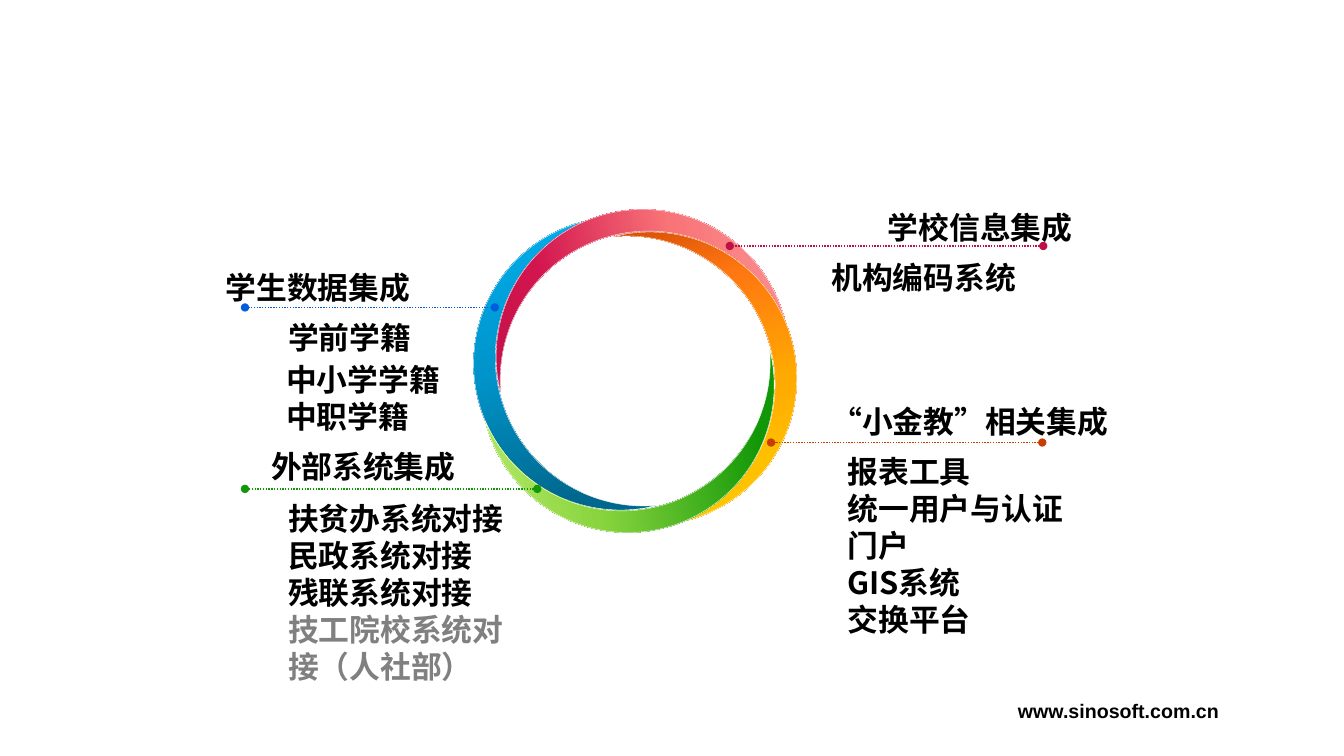
from lxml import etree
from pptx import Presentation
from pptx.dml.color import RGBColor
from pptx.enum.dml import MSO_LINE
from pptx.enum.shapes import MSO_CONNECTOR, MSO_SHAPE
from pptx.enum.text import MSO_AUTO_SIZE
from pptx.oxml.ns import qn
from pptx.util import Pt

STRAIGHT = MSO_CONNECTOR.STRAIGHT
MOON = MSO_SHAPE.MOON
DOTTED = MSO_LINE.ROUND_DOT
FIT_SHAPE = MSO_AUTO_SIZE.SHAPE_TO_FIT_TEXT

CHINESE_FONT = "Noto Sans CJK SC"
BLACK, GRAY, WHITE = "000000", "808080", "FFFFFF"
BLUE, GREEN, RED, ORANGE = "005DDF", "119707", "BE1247", "C73E01"


def color(value):
    return RGBColor.from_string(value)


class IntegrationSlide:
    body = {"size": Pt(22), "bold": True, "name": CHINESE_FONT}
    footer = {"size": Pt(14), "bold": True, "name": "Arial"}
    line_height = 26.6
    padding = 7.2

    def __init__(self, presentation):
        self.slide = presentation.slides.add_slide(presentation.slide_layouts[6])

    def text(self, left, top, width, lines, style=None, wrap=True, rows=None, last_color=BLACK):
        """Write one paragraph per line; rows counts the lines after wrapping."""
        style = style or self.body
        height = self.padding + self.line_height * (rows or len(lines))
        box = self.slide.shapes.add_textbox(Pt(left), Pt(top), Pt(width), Pt(height))
        frame = box.text_frame
        frame.word_wrap = wrap
        frame.auto_size = FIT_SHAPE
        for index, line in enumerate(lines):
            paragraph = frame.paragraphs[0] if index == 0 else frame.add_paragraph()
            run = paragraph.add_run()
            run.text = line
            for name, value in style.items():
                setattr(run.font, name, value)
            run.font.color.rgb = color(last_color if index == len(lines) - 1 else BLACK)
            east_asian = etree.SubElement(run.font._element, qn("a:ea"))
            east_asian.set("typeface", style["name"])

    def crescent(self, center_x, center_y, rotation, stops):
        width, height = 105.1, 209.5
        shape = self.slide.shapes.add_shape(
            MOON, Pt(center_x - width / 2), Pt(center_y - height / 2), Pt(width), Pt(height))
        shape.shadow.inherit = False
        shape.rotation = rotation
        shape.adjustments[0] = 0.152
        shape.line.color.rgb = color(WHITE)
        shape.line.width = Pt(0.25)
        shape.fill.gradient()
        shape.fill.gradient_angle = 90
        stop_list = shape._element.spPr.find(".//" + qn("a:gsLst"))
        for stop in list(stop_list):
            stop_list.remove(stop)
        for percent, value in stops:
            stop = etree.SubElement(stop_list, qn("a:gs"), pos=str(percent * 1000))
            etree.SubElement(stop, qn("a:srgbClr"), val=value)

    def leader(self, start, end, y, line_color):
        """Draw a dotted horizontal line with a dot at each end."""
        connector = self.slide.shapes.add_connector(STRAIGHT, Pt(start), Pt(y), Pt(end), Pt(y))
        line = connector.line
        line.color.rgb = color(line_color)
        line.width = Pt(1)
        line.dash_style = DOTTED
        for tag in ("a:headEnd", "a:tailEnd"):
            etree.SubElement(line._ln, qn(tag), type="oval")
        etree.SubElement(connector._element.spPr, qn("a:effectLst"))


def build_ring(page):
    crescents = [
        [(17, "00688E"), (56, "0094CA"), (100, "00B0F0")],
        [(0, "BE1247"), (27, "D2144F"), (66, "F87477"), (100, "FA9496")],
        [(0, "C73E01"), (27, "FF7711"), (59, "FFAA01"), (80, "FFC000"), (100, "FECE02")],
        [(18, "119707"), (67, "8AD53F"), (100, "BCEB6F")],
    ]
    center_x, center_y = 453.7, 265
    offset_x, offset_y = -61.3, 7.3
    for index, stops in enumerate(crescents):
        rotation = (345.9 + 90 * index) % 360
        page.crescent(center_x + offset_x, center_y + offset_y, rotation, stops)
        offset_x, offset_y = -offset_y, offset_x  # a quarter turn clockwise


def main():
    presentation = Presentation()
    presentation.slide_width, presentation.slide_height = Pt(960), Pt(540)
    page = IntegrationSlide(presentation)

    page.text(720, 495.4, 159, ["www.sinosoft.com.cn"], style=page.footer, wrap=False)
    build_ring(page)

    for leader in [
        (353.5, 175, 219.6, BLUE),
        (383.8, 175, 349.2, GREEN),
        (745.2, 521.3, 175.7, RED),
        (744.5, 550.8, 316.1, ORANGE),
    ]:
        page.leader(leader[0], leader[1], leader[2], leader[3])

    for left, top, width, lines in [
        (186.5, 316.1, 147.6, ["外部系统集成"]),
        (154.1, 188.6, 168.5, ["学生数据集成"]),
        (627.1, 145.4, 157, ["学校信息集成"]),
        (586.8, 284.4, 226, ["“小金教”相关集成"]),
        (198.7, 223.9, 136, ["学前学籍"]),
        (586.8, 181.4, 157, ["机构编码系统"]),
        (598.3, 319.7, 203, ["报表工具", "统一用户与认证", "门户", "GIS系统", "交换平台"]),
        (197.3, 254.2, 136, ["中小学学籍", "中职学籍"]),
    ]:
        page.text(left, top, width, lines)
    page.text(198.7, 353.5, 169.2,
              ["扶贫办系统对接", "民政系统对接", "残联系统对接", "技工院校系统对接（人社部）"],
              rows=5, last_color=GRAY)

    presentation.save("out.pptx")


if __name__ == "__main__":
    main()
